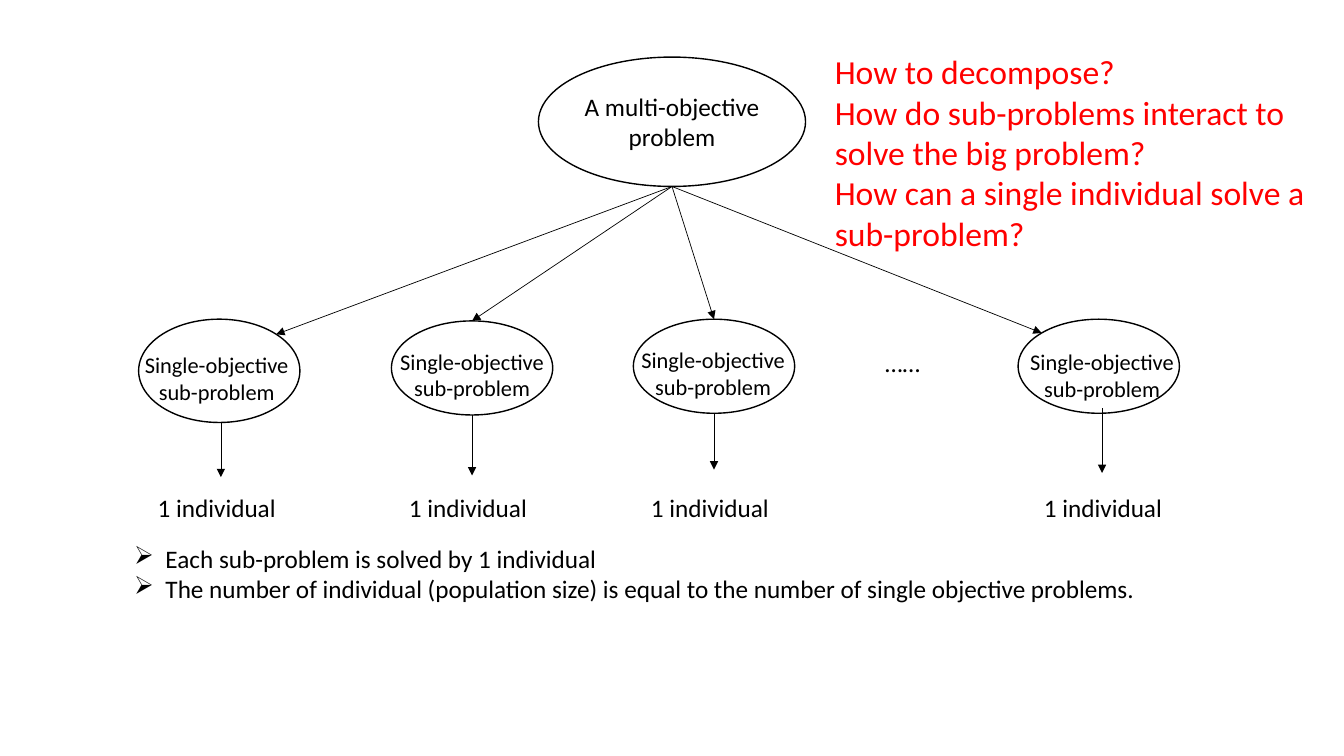
"""Draw the decomposition of a multi-objective problem into sub-problems, on a 160 by 90 grid."""
import dataclasses
import math
import typing

import lxml.etree
import pptx
import pptx.dml.color
import pptx.enum.shapes
import pptx.enum.text
import pptx.oxml.ns
import pptx.shapes.autoshape
import pptx.shapes.connector
import pptx.slide
import pptx.util

COLORS = {"ink": "000000", "question": "FF0000"}
FONT = "Calibri"
SLIDE_WIDTH = pptx.util.Inches(13.33)
SLIDE_HEIGHT = pptx.util.Inches(7.5)
COLUMNS, ROWS = 160, 90
BRANCH_WIDTH = 19.2
DIAGONAL_INSET = (1 - math.sqrt(0.5)) / 2
LEFT, CENTER = pptx.enum.text.PP_ALIGN.LEFT, pptx.enum.text.PP_ALIGN.CENTER


@dataclasses.dataclass(frozen=True)
class Box:
    left: float
    top: float
    width: float
    height: float


@dataclasses.dataclass(frozen=True)
class Branch:
    left: float
    top: float
    height: float
    entry: float
    label_left: float
    label_top: float
    arrow_column: float
    arrow_start: float
    arrow_end: float
    individual_left: float


@dataclasses.dataclass(frozen=True)
class Text:
    box: Box
    paragraphs: tuple[str, ...]
    size: float = 18
    color: str = "ink"
    alignment: pptx.enum.text.PP_ALIGN = LEFT
    bullet: str = ""


ROOT = Box(64.1, 6.8, 31.8, 15.4)
BRANCHES = (
    Branch(16.5, 38, 12.3, 1 - DIAGONAL_INSET, 14.8, 41.2, 26.3, 50.3, 56.8, 17.6),
    Branch(46.6, 38.2, 11.2, 0.5, 45.2, 40.8, 56.2, 49.4, 56.6, 47.5),
    Branch(75.4, 38, 11.2, 0.5, 73.9, 40.6, 85, 49.2, 55.9, 76.3),
    Branch(121.2, 38, 11.2, DIAGONAL_INSET, 120.2, 40.9, 131.2, 48.6, 56.3, 123.1),
)
TEXTS = (
    Text(Box(65.5, 10.3, 29, 8.5), ("A multi-objective problem",), alignment=CENTER),
    Text(Box(104.2, 40.8, 14.4, 4.8), ("……",)),
    Text(
        Box(14.8, 64.1, 131.3, 12.1),
        (
            "Each sub-problem is solved by 1 individual",
            "The number of individual (population size) is equal to the number of single objective problems.",
        ),
        bullet="➢",
    ),
    Text(
        Box(98.2, 5.5, 59.5, 25.4),
        (
            "How to decompose?",
            "How do sub-problems interact to solve the big problem?",
            "How can a single individual solve a sub-problem?",
        ),
        size=24,
        color="question",
    ),
)


def across(columns: float) -> pptx.util.Emu:
    return pptx.util.Emu(round(SLIDE_WIDTH * columns / COLUMNS))


def down(rows: float) -> pptx.util.Emu:
    return pptx.util.Emu(round(SLIDE_HEIGHT * rows / ROWS))


def place(box: Box) -> tuple[pptx.util.Emu, ...]:
    return across(box.left), down(box.top), across(box.width), down(box.height)


def color(name: str) -> pptx.dml.color.RGBColor:
    return pptx.dml.color.RGBColor.from_string(COLORS[name])


def add_child(parent: typing.Any, tag: str, **attributes: str) -> None:
    lxml.etree.SubElement(parent, pptx.oxml.ns.qn(tag), attributes)


def add_ellipse(slide: pptx.slide.Slide, box: Box) -> pptx.shapes.autoshape.Shape:
    shape = slide.shapes.add_shape(pptx.enum.shapes.MSO_SHAPE.OVAL, *place(box))
    shape.shadow.inherit = False
    shape.fill.background()
    shape.line.color.rgb = color("ink")
    shape.line.width = pptx.util.Pt(1)
    return shape


def add_arrow(
    slide: pptx.slide.Slide, start: tuple[float, float], end: tuple[float, float]
) -> pptx.shapes.connector.Connector:
    connector = slide.shapes.add_connector(
        pptx.enum.shapes.MSO_CONNECTOR.STRAIGHT,
        across(start[0]), down(start[1]), across(end[0]), down(end[1]),
    )
    connector.line.color.rgb = color("ink")
    connector.line.width = pptx.util.Pt(0.5)
    add_child(connector.line._get_or_add_ln(), "a:tailEnd", type="triangle")
    add_child(connector._element.spPr, "a:effectLst")
    return connector


def add_text(slide: pptx.slide.Slide, text: Text) -> None:
    frame = slide.shapes.add_textbox(*place(text.box)).text_frame
    frame.word_wrap = True
    frame.auto_size = pptx.enum.text.MSO_AUTO_SIZE.SHAPE_TO_FIT_TEXT
    for index, words in enumerate(text.paragraphs):
        paragraph = frame.add_paragraph() if index else frame.paragraphs[0]
        paragraph.alignment = text.alignment
        if text.bullet:
            properties = paragraph._p.get_or_add_pPr()
            indent = pptx.util.Inches(0.31)
            properties.set("marL", str(indent))
            properties.set("indent", str(-indent))
            add_child(properties, "a:buChar", char=text.bullet)
        run = paragraph.add_run()
        run.text = words
        run.font.name = FONT
        run.font.size = pptx.util.Pt(text.size)
        run.font.color.rgb = color(text.color)


def add_branch(slide: pptx.slide.Slide, branch: Branch) -> None:
    ellipse = add_ellipse(slide, Box(branch.left, branch.top, BRANCH_WIDTH, branch.height))
    meets_top = branch.entry == 0.5
    entry_row = branch.top + (0 if meets_top else DIAGONAL_INSET * branch.height)
    root_exit = (ROOT.left + ROOT.width / 2, ROOT.top + ROOT.height)
    arrow = add_arrow(slide, root_exit, (branch.left + branch.entry * BRANCH_WIDTH, entry_row))
    if meets_top:
        arrow.end_connect(ellipse, 0)
    add_arrow(
        slide, (branch.arrow_column, branch.arrow_start), (branch.arrow_column, branch.arrow_end)
    )
    label_box = Box(branch.label_left, branch.label_top, 22, 7.7)
    add_text(slide, Text(label_box, ("Single-objective sub-problem",), 16, alignment=CENTER))
    add_text(slide, Text(Box(branch.individual_left, 58, 17.3, 4.8), ("1 individual",)))


def main() -> None:
    presentation = pptx.Presentation()
    presentation.slide_width = SLIDE_WIDTH
    presentation.slide_height = SLIDE_HEIGHT
    slide = presentation.slides.add_slide(presentation.slide_layouts[6])
    add_ellipse(slide, ROOT)
    for branch in BRANCHES:
        add_branch(slide, branch)
    for text in TEXTS:
        add_text(slide, text)
    presentation.save("out.pptx")


if __name__ == "__main__":
    main()
